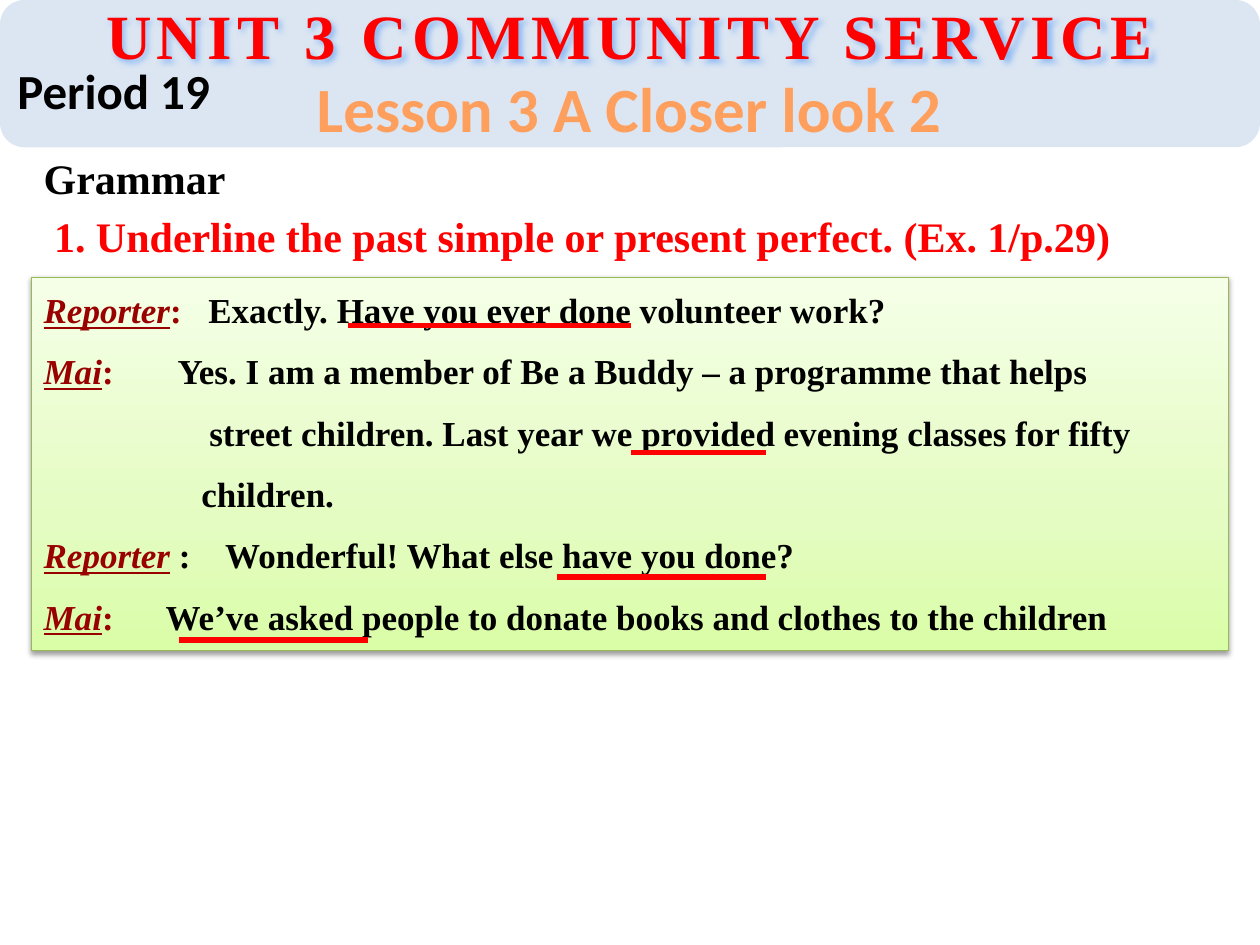
from lxml import etree
from pptx import Presentation
from pptx import oxml
from pptx.dml import color
from pptx.enum import shapes, text
from pptx.oxml import ns
from pptx.util import Cm, Pt

SERIF, SANS = "Times New Roman", "Calibri"
RED, MAROON, BLACK = "FF0000", "990000", "000000"
ORANGE = [(0, "FFA367"), (25, "FF9F5D"), (50, "F38E3A"), (75, "FF9F5D"), (100, "FFA367")]
GREEN = [(0, "DAFDA7"), (35, "E4FCC2"), (100, "F5FFE7")]

UNIT = "UNIT 3 COMMUNITY SERVICE"
LESSON = "Lesson 3 A Closer look 2"
PERIOD = "Period 19"
HEADING = "Grammar"
TASK = "1. Underline the past simple or present perfect. (Ex. 1/p.29)"
DIALOGUE = [
    ("Reporter", ":", MAROON, 3.32, "Exactly. Have you ever done volunteer work?"),
    ("Mai", ":", MAROON, 2.7, "Yes. I am a member of Be a Buddy – a programme that helps"),
    ("", "", BLACK, 3.34, "street children. Last year we provided evening classes for fifty"),
    ("", "", BLACK, 3.18, "children."),
    ("Reporter", " :", BLACK, 3.66, "Wonderful! What else have you done?"),
    ("Mai", ":", MAROON, 2.46, "We’ve asked people to donate books and clothes to the children"),
]
UNDERLINES = [(7.01, 12.73, 6.56), (12.73, 15.44, 9.12), (11.23, 15.44, 11.63), (3.61, 7.42, 12.9)]


def rgb(value):
    return color.RGBColor.from_string(value)


def xml(markup):
    return oxml.parse_xml(markup.replace(">", f" {ns.nsdecls('a')}>", 1))


def set_gradient(fill, owner, stops, angle):
    fill.gradient()
    fill.gradient_angle = angle
    stop_list = owner.xpath(".//a:gsLst")[0]
    for stop in list(stop_list):
        stop_list.remove(stop)
    for position, value in stops:
        stop_list.append(xml(f'<a:gs pos="{position * 1000}"><a:srgbClr val="{value}"/></a:gs>'))


def set_shadow(shape, value, alpha, blur, distance, angle):
    shape.shadow.inherit = False
    effects = shape.element.spPr.find(ns.qn("a:effectLst"))
    effects.append(xml(
        f'<a:outerShdw blurRad="{Pt(blur)}" dist="{Pt(distance)}" dir="{angle * 60000}" rotWithShape="0">'
        f'<a:srgbClr val="{value}"><a:alpha val="{alpha * 1000}"/></a:srgbClr></a:outerShdw>'))


def add_run(paragraph, content, size=20, font=SERIF, ink=BLACK, label=False, spacing=0, stops=None):
    run = paragraph.add_run()
    run.text = content
    run.font.name, run.font.size, run.font.bold = font, Pt(size), True
    if label:
        run.font.italic = run.font.underline = True
    if stops:
        set_gradient(run.font.fill, run._r, stops, 270)
    else:
        run.font.color.rgb = rgb(ink)
    if spacing:
        run._r.get_or_add_rPr().set("spc", str(spacing * 100))
    return run


def add_label(parent, place, content, wrap=True, align=text.PP_ALIGN.LEFT, **style):
    box = parent.add_textbox(*map(Cm, place))
    box.text_frame.word_wrap = wrap
    paragraph = box.text_frame.paragraphs[0]
    paragraph.alignment = align
    add_run(paragraph, content, **style)
    return box


def add_dialogue(slide):
    panel = slide.shapes.add_shape(shapes.MSO_SHAPE.RECTANGLE, Cm(0.63), Cm(5.59), Cm(24.13), Cm(7.52))
    set_gradient(panel.fill, panel.element.spPr, GREEN, 90)
    panel.line.color.rgb, panel.line.width = rgb("98B955"), Pt(0.75)
    set_shadow(panel, BLACK, 38, 3.1, 1.6, 90)
    frame = panel.text_frame
    frame.word_wrap = True
    frame.vertical_anchor = text.MSO_ANCHOR.TOP
    frame.margin_top = Cm(0.23)
    for index, (speaker, colon, colon_ink, start, speech) in enumerate(DIALOGUE):
        paragraph = frame.add_paragraph() if index else frame.paragraphs[0]
        paragraph.alignment = text.PP_ALIGN.LEFT
        if index:
            paragraph.space_before = Pt(11)
        properties = paragraph._p.get_or_add_pPr()
        if speaker:
            properties.append(xml(f'<a:tabLst><a:tab pos="{Cm(start)}" algn="l"/></a:tabLst>'))
            add_run(paragraph, speaker, ink=MAROON, label=True)
            add_run(paragraph, colon + "\t", ink=colon_ink)
        else:
            properties.set("marL", str(Cm(start)))
            properties.set("indent", "0")
        add_run(paragraph, speech)


def add_banner(slide):
    banner = slide.shapes.add_group_shape().shapes
    band = banner.add_shape(shapes.MSO_SHAPE.ROUNDED_RECTANGLE, 0, 0, Cm(25.4), Cm(2.97))
    band.shadow.inherit = False
    band.fill.solid()
    band.fill.fore_color.rgb = rgb("DCE6F2")
    band.line.fill.background()
    center = dict(wrap=False, align=text.PP_ALIGN.CENTER, size=36)
    unit = add_label(banner, (1.73, -0.2, 21.95, 1.8), UNIT, ink=RED, spacing=3, **center)
    outline = xml(f'<a:ln w="{Pt(0.9)}"><a:solidFill><a:srgbClr val="F4F6F9"/></a:solidFill></a:ln>')
    unit.text_frame.paragraphs[0].runs[0]._r.get_or_add_rPr().insert(0, outline)
    set_shadow(unit, "6FA8F5", 70, 3, 2, 45)
    add_label(banner, (6.07, 1.27, 13.23, 1.8), LESSON, font=SANS, stops=ORANGE, **center)
    add_label(banner, (0.1, 1.09, 4.72, 1.45), PERIOD, size=28, font=SANS)


def add_underlines(slide):
    for left, right, height in UNDERLINES:
        mark = slide.shapes.add_connector(
            shapes.MSO_CONNECTOR.STRAIGHT, Cm(left), Cm(height), Cm(right), Cm(height))
        mark.line.color.rgb, mark.line.width = rgb(RED), Pt(3)
        etree.SubElement(mark.element.spPr, ns.qn("a:effectLst"))


def main():
    deck = Presentation()
    deck.slide_width, deck.slide_height = Cm(25.4), Cm(19.05)
    slide = deck.slides.add_slide(deck.slide_layouts[6])
    add_banner(slide)
    add_label(slide.shapes, (0.63, 2.95, 5.08, 1.27), HEADING, size=24)
    add_dialogue(slide)
    add_label(slide.shapes, (0.84, 4.11, 22.83, 1.27), TASK, size=24, ink=RED)
    add_underlines(slide)
    deck.save("out.pptx")


if __name__ == "__main__":
    main()
